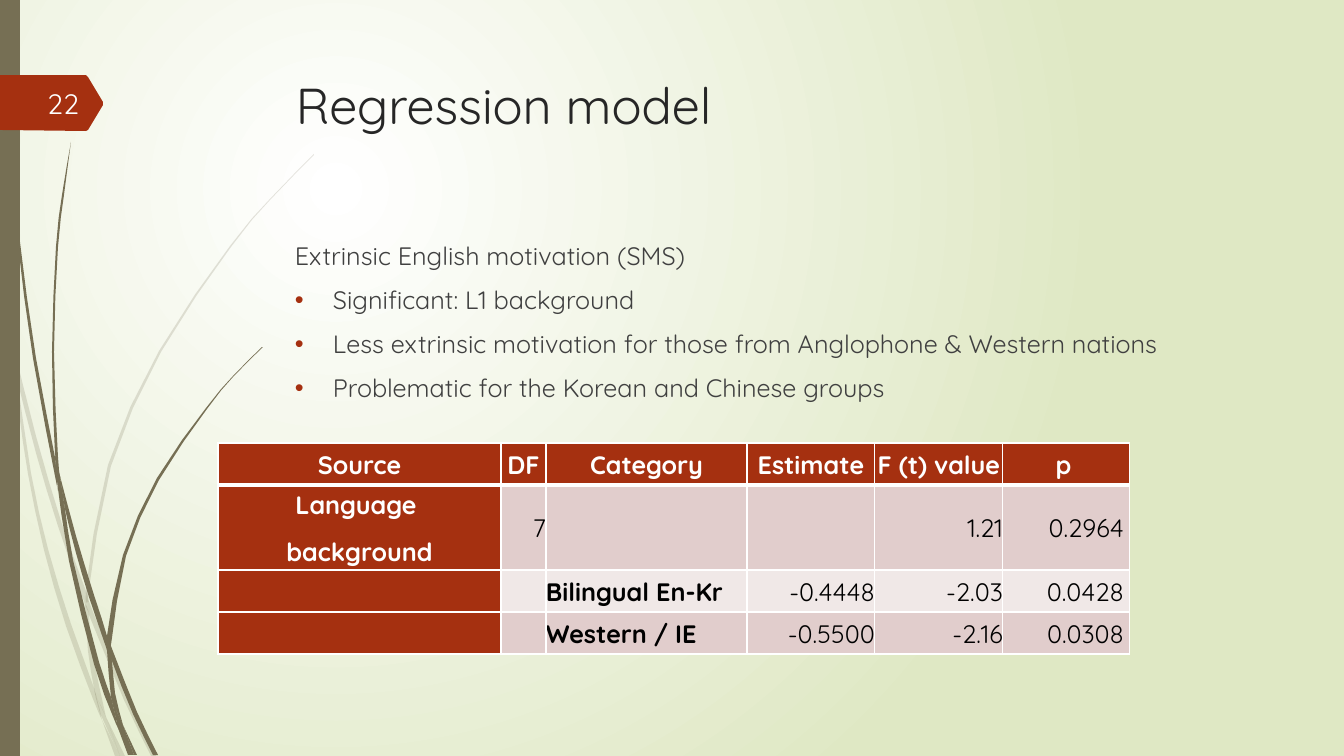
from lxml import etree
from pptx import Presentation
from pptx.dml.color import RGBColor
from pptx.enum.shapes import MSO_SHAPE
from pptx.enum.text import MSO_ANCHOR, PP_ALIGN
from pptx.oxml.ns import qn
from pptx.util import Pt

PX = 9144000 / 1008  # EMU in one px, at 100.8 px to the inch
WIDTH, HEIGHT = 1344, 756
FONT = "Quicksand"
RECTANGLE = MSO_SHAPE.RECTANGLE
TOP, MIDDLE = MSO_ANCHOR.TOP, MSO_ANCHOR.MIDDLE
LEFT, CENTER, RIGHT = PP_ALIGN.LEFT, PP_ALIGN.CENTER, PP_ALIGN.RIGHT

COLORS = {
    "white": "FFFFFF", "backdrop": "DFE8C4", "grass": "766F54",
    "accent": "A53010", "title": "262626", "body": "404040",
    "number": "FEFFFF", "cell": "000000", "band dark": "E1CDCC",
    "band light": "F0E8E7",
}

# Grass pieces: the two long edges of each, from the same end
FAINT_GRASS = [
    ([(0, 284), (9, 325), (11, 353)], [(0, 301), (10, 347), (11, 353)]),
    ([(14, 348), (36, 436), (62, 524), (86, 591)],
     [(17, 379), (36, 453), (58, 526), (85, 604)]),
    ([(89, 601), (93, 612), (128, 698), (156, 756)],
     [(89, 615), (124, 700), (151, 756)]),
    ([(106, 717), (125, 756)], [(106, 717), (120, 756)]),
    ([(11, 353), (17, 379), (31, 473), (48, 549), (71, 624), (94, 688), (102, 720)],
     [(11, 353), (19, 413), (28, 474), (44, 550), (66, 626), (93, 699), (102, 720)]),
    ([(85, 604), (88, 651), (94, 688), (97, 698), (106, 717)],
     [(85, 604), (89, 613), (92, 651), (106, 717)]),
    ([(314, 154), (270, 199), (230, 246), (159, 351), (108, 465), (86, 589), (89, 601)],
     [(314, 155), (270, 200), (231, 247), (161, 352), (111, 466), (89, 589), (89, 601)]),
    ([(102, 720), (115, 756)], [(102, 720), (120, 756)]),
    ([(86, 591), (85, 604), (89, 613)], [(86, 591), (89, 601), (89, 615)]),
    ([(94, 688), (100, 713), (120, 756)],
     [(94, 688), (97, 698), (106, 717), (120, 756)]),
]
SOLID_GRASS = [
    ([(3, 0), (4, 48), (7, 111), (17, 235), (33, 358), (56, 481), (57, 485)],
     [(4, 0), (5, 48), (8, 110), (19, 234), (36, 358), (55, 457), (57, 485)]),
    ([(60, 476), (76, 536), (94, 595), (107, 636), (107, 650)],
     [(60, 476), (65, 509), (76, 553), (89, 597), (107, 650)]),
    ([(111, 646), (114, 654), (137, 712), (158, 755)],
     [(111, 646), (112, 661), (133, 714), (153, 755)]),
    ([(57, 481), (69, 561), (94, 664), (112, 714), (118, 728)],
     [(57, 481), (65, 509), (73, 560), (99, 662), (111, 697), (118, 728)]),
    ([(71, 142), (62, 195), (56, 247), (52, 352), (55, 453), (60, 476)],
     [(71, 142), (64, 195), (58, 247), (54, 352), (58, 457), (60, 476)]),
    ([(123, 725), (137, 755)], [(123, 725), (134, 755)]),
    ([(55, 453), (60, 476), (65, 509)], [(55, 453), (57, 481), (65, 509)]),
    ([(262, 347), (233, 376), (206, 408), (157, 478), (123, 555), (107, 636), (111, 646)],
     [(263, 347), (233, 377), (207, 409), (159, 480), (126, 556), (112, 638), (111, 646)]),
    ([(118, 728), (128, 755)], [(118, 728), (132, 755)]),
    ([(107, 650), (111, 697), (117, 712), (123, 725)],
     [(107, 650), (112, 661), (115, 693), (123, 725)]),
    ([(107, 636), (107, 650), (112, 661)], [(107, 636), (111, 646), (112, 661)]),
    ([(111, 697), (117, 723), (118, 728), (131, 755)],
     [(111, 697), (117, 712), (123, 725), (134, 755)]),
]
NUMBER_TAG = [(0, 75), (86, 75), (88, 77), (103, 102), (103, 105),
              (88, 130), (86, 131), (0, 130)]

BULLETS = [
    "Significant: L1 background",
    "Less extrinsic motivation for those from Anglophone & Western nations",
    "Problematic for the Korean and Chinese groups",
]
COLUMNS = [283, 45, 201, 128, 128, 127]
ROWS = [42, 85, 42, 42]
MODEL = [
    ["Source", "DF", "Category", "Estimate", "F (t) value", "p"],
    ["Language \nbackground", "7", "", "", "1.21", "0.2964"],
    ["", "", "Bilingual En-Kr", "-0.4448", "-2.03", "0.0428"],
    ["", "", "Western / IE", "-0.5500", "-2.16", "0.0308"],
]


def emu(*lengths):
    return [round(length * PX) for length in lengths]


def rgb(name):
    return RGBColor.from_string(COLORS[name])


def style(para, size, color, align=LEFT, bold=False):
    para.alignment = align
    para.font.name, para.font.size, para.font.bold = FONT, Pt(size), bold
    para.font.color.rgb = rgb(color)


def paint(shape, color, opacity=100):
    shape.shadow.inherit = False
    shape.line.fill.background()
    shape.fill.solid()
    shape.fill.fore_color.rgb = rgb(color)
    if opacity < 100:
        for tone in shape.fill._xPr.iter(qn("a:srgbClr")):
            etree.SubElement(tone, qn("a:alpha"), val=str(opacity * 1000))


def set_backdrop(page):
    fill = page.background.fill
    fill.gradient()
    for stop, position, color in zip(fill.gradient_stops, (0, 1), ("white", "backdrop")):
        stop.position, stop.color.rgb = position, rgb(color)
    gradient = fill._xPr.find(qn("a:gradFill"))
    gradient.remove(gradient.find(qn("a:lin")))
    glow = etree.SubElement(gradient, qn("a:path"), path="circle")
    etree.SubElement(glow, qn("a:fillToRect"), l="50000", t="50000",
                     r="100000", b="100000")


def add_outline(page, points, color, opacity=100):
    corners = [emu(x, y) for x, y in points]
    builder = page.shapes.build_freeform(*corners[0])
    builder.add_line_segments(corners[1:], close=True)
    paint(builder.convert_to_shape(), color, opacity)


def smooth(knots):
    """Add the middle of each Catmull-Rom span between the knots."""
    if len(knots) == 2:
        return knots
    ends = [knots[0], *knots, knots[-1]]
    curve = []
    for a, b, c, d in zip(ends, ends[1:], ends[2:], ends[3:]):
        middle = [(9 * (q + r) - p - s) / 16 for p, q, r, s in zip(a, b, c, d)]
        curve += [b, middle]
    return curve + [knots[-1]]


def add_text(page, place, lines, size, color, align=LEFT, anchor=TOP):
    frame = page.shapes.add_textbox(*emu(*place)).text_frame
    frame.word_wrap, frame.vertical_anchor = True, anchor
    frame.text = "\n".join(lines)
    for para in frame.paragraphs:
        style(para, size, color, align)
    return frame.paragraphs


def add_bullet(para):
    indent = emu(38)[0]
    properties = para._p.get_or_add_pPr()
    properties.set("marL", str(indent))
    properties.set("indent", str(-indent))
    tint = etree.SubElement(properties, qn("a:buClr"))
    etree.SubElement(tint, qn("a:srgbClr"), val=COLORS["accent"])
    etree.SubElement(properties, qn("a:buFont"), typeface="Arial")
    etree.SubElement(properties, qn("a:buChar"), char="•")


def add_borders(cell, bottom):
    properties = cell._tc.get_or_add_tcPr()
    for i, (side, points) in enumerate((("L", 1), ("R", 1), ("T", 1), ("B", bottom))):
        line = etree.Element(qn("a:ln" + side), w=str(Pt(points)))
        fill = etree.SubElement(line, qn("a:solidFill"))
        etree.SubElement(fill, qn("a:srgbClr"), val=COLORS["white"])
        properties.insert(i, line)


def fill_cell(cell, text, row, column):
    heading = row == 0 or column == 0
    band = "band dark" if row % 2 else "band light"
    cell.fill.solid()
    cell.fill.fore_color.rgb = rgb("accent" if heading else band)
    cell.vertical_anchor, cell.text = MIDDLE, text
    cell.margin_left = cell.margin_top = 0
    cell.margin_right, cell.margin_bottom = emu(6 if column == 5 else 0, 3)
    align = CENTER if heading else LEFT if column == 2 else RIGHT
    for para in cell.text_frame.paragraphs:
        style(para, 18, "white" if heading else "cell", align, heading or column == 2)
        para.line_spacing, para.space_after = 1.15, Pt(7.1)
    add_borders(cell, 3 if row == 0 else 1)


def add_model_table(page):
    place = emu(218, 443, sum(COLUMNS), sum(ROWS))
    table = page.shapes.add_table(len(ROWS), len(COLUMNS), *place).table
    for column, width in zip(table.columns, emu(*COLUMNS)):
        column.width = width
    for row, height in zip(table.rows, emu(*ROWS)):
        row.height = height
    for row, texts in enumerate(MODEL):
        for column, text in enumerate(texts):
            fill_cell(table.cell(row, column), text, row, column)


def main():
    deck = Presentation()
    deck.slide_width, deck.slide_height = emu(WIDTH, HEIGHT)
    page = deck.slides.add_slide(deck.slide_layouts[6])
    # Backdrop and grass
    set_backdrop(page)
    for pieces, opacity in ((FAINT_GRASS, 20), (SOLID_GRASS, 100)):
        for near, far in pieces:
            add_outline(page, smooth(near) + smooth(far)[::-1], "grass", opacity)
    # Side bar and page number
    paint(page.shapes.add_shape(RECTANGLE, *emu(0, 0, 20, HEIGHT)), "grass")
    add_outline(page, NUMBER_TAG, "accent")
    add_text(page, (7, 83, 82, 40), ["22"], 20, "number", RIGHT, MIDDLE)
    # Title and findings
    add_text(page, (286, 69, 983, 141), ["Regression model"], 36, "title")
    findings = add_text(page, (285, 235, 983, 416),
                        ["Extrinsic English motivation (SMS)", *BULLETS], 18, "body")
    for para in findings:
        para.space_before = Pt(10)
    for para in findings[1:]:
        add_bullet(para)
    # Regression results
    add_model_table(page)
    deck.save("out.pptx")


if __name__ == "__main__":
    main()
